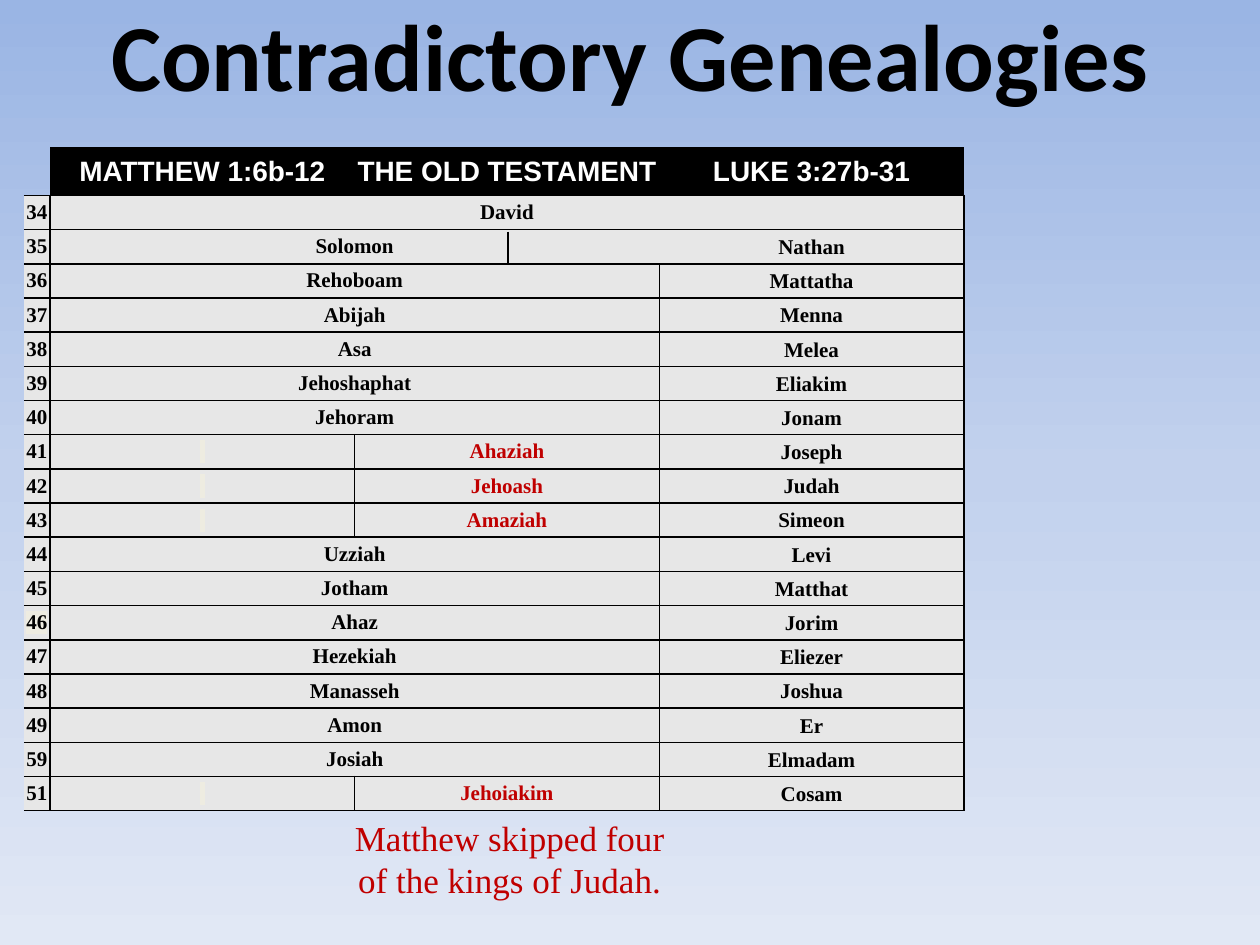
from copy import deepcopy

from lxml.etree import SubElement
from pptx import Presentation
from pptx.dml.color import RGBColor
from pptx.enum.shapes import MSO_CONNECTOR
from pptx.enum.text import MSO_ANCHOR, PP_ALIGN
from pptx.oxml.ns import qn
from pptx.util import Cm, Pt

BLACK = RGBColor(0x00, 0x00, 0x00)
WHITE = RGBColor(0xFF, 0xFF, 0xFF)
RED = RGBColor(0xC0, 0x00, 0x00)
GREY = RGBColor(0xE7, 0xE7, 0xE7)
CREAM = RGBColor(0xEE, 0xEC, 0xE1)
BACKGROUND_STOPS = [
    (0, RGBColor(0x9A, 0xB5, 0xE4)),
    (0.5, RGBColor(0xC2, 0xD1, 0xED)),
    (1, RGBColor(0xE1, 0xE8, 0xF5)),
]

TITLE_FORMAT = {"name": "Calibri", "size": Pt(54), "bold": True}
HEADER_FORMAT = {"name": "Arial", "size": Pt(16), "bold": True}
NAME_FORMAT = {"name": "Times New Roman", "size": Pt(12), "bold": True}
CAPTION_FORMAT = {"name": "Times New Roman", "size": Pt(20), "bold": False}

HEADERS = ["MATTHEW 1:6b-12", "THE OLD TESTAMENT", "LUKE 3:27b-31"]
# number, name in Matthew and the Old Testament, name in Luke
GENERATIONS = [
    ("34", "David", None),
    ("35", "Solomon", "Nathan"),
    ("36", "Rehoboam", "Mattatha"),
    ("37", "Abijah", "Menna"),
    ("38", "Asa", "Melea"),
    ("39", "Jehoshaphat", "Eliakim"),
    ("40", "Jehoram", "Jonam"),
    ("41", "Ahaziah", "Joseph"),
    ("42", "Jehoash", "Judah"),
    ("43", "Amaziah", "Simeon"),
    ("44", "Uzziah", "Levi"),
    ("45", "Jotham", "Matthat"),
    ("46", "Ahaz", "Jorim"),
    ("47", "Hezekiah", "Eliezer"),
    ("48", "Manasseh", "Joshua"),
    ("49", "Amon", "Er"),
    ("59", "Josiah", "Elmadam"),
    ("51", "Jehoiakim", "Cosam"),
]
SKIPPED_KINGS = {"Ahaziah", "Jehoash", "Amaziah", "Jehoiakim"}


def write(text_frame, text, formats, color, highlight=None):
    paragraph = text_frame.paragraphs[0]
    paragraph.alignment = PP_ALIGN.CENTER
    run = paragraph.add_run()
    run.text = text
    for name, value in formats.items():
        setattr(run.font, name, value)
    run.font.color.rgb = color
    if highlight is not None:
        properties = run.font._element
        element = SubElement(properties, qn("a:highlight"))
        SubElement(element, qn("a:srgbClr"), val=str(highlight))
        properties.find(qn("a:latin")).addprevious(element)


def set_borders(cell, sides):
    """Draw the sides named in a string of L, R, T and B; clear the others."""
    properties = cell._tc.get_or_add_tcPr()
    for index, side in enumerate("LRTB"):
        line = SubElement(properties, qn(f"a:ln{side}"), w=str(Pt(1)))
        if side in sides:
            fill = SubElement(line, qn("a:solidFill"))
            SubElement(fill, qn("a:srgbClr"), val=str(BLACK))
        else:
            SubElement(line, qn("a:noFill"))
        properties.insert(index, line)


presentation = Presentation()
presentation.slide_width = Cm(25.4)
presentation.slide_height = Cm(19.05)
slide = presentation.slides.add_slide(presentation.slide_layouts[5])

# Background
background_fill = slide.background.fill
background_fill.gradient()
background_fill.gradient_angle = 270
stop_list = slide.element.find(".//" + qn("a:gsLst"))
stop_list.insert(1, deepcopy(stop_list[0]))
for stop, (position, color) in zip(background_fill.gradient_stops, BACKGROUND_STOPS):
    stop.position = position
    stop.color.rgb = color

# Title
title = slide.shapes.title
title.left, title.top, title.width, title.height = Cm(0), Cm(0), Cm(25.4), Cm(2.16)
title.text_frame.vertical_anchor = MSO_ANCHOR.MIDDLE
write(title.text_frame, "Contradictory Genealogies", TITLE_FORMAT, BLACK)

# Genealogy table
widths = [Cm(0.53)] + [Cm(6.14)] * 3
heights = [Cm(0.97)] + [Cm(0.69)] * len(GENERATIONS)
table = slide.shapes.add_table(
    len(heights), len(widths), Cm(0.48), Cm(2.97), sum(widths), sum(heights)
).table
for column, width in zip(table.columns, widths):
    column.width = width
for row, height in zip(table.rows, heights):
    row.height = height

for row_index in range(len(heights)):
    for column_index in range(len(widths)):
        cell = table.cell(row_index, column_index)
        cell.margin_left = cell.margin_right = cell.margin_top = cell.margin_bottom = 0
        cell.vertical_anchor = MSO_ANCHOR.MIDDLE
        if row_index == 0:
            sides = "B"
        elif column_index == 0:
            sides = "RTB"
        elif row_index == 2:
            sides = {1: "LTB", 2: "TB", 3: "RTB"}[column_index]
        else:
            sides = "LRTB"
        if row_index > 0:
            cell.fill.solid()
            cell.fill.fore_color.rgb = GREY
        elif column_index > 0:
            cell.fill.solid()
            cell.fill.fore_color.rgb = BLACK
        else:
            cell.fill.background()
        set_borders(cell, sides)

for column_index, header in enumerate(HEADERS, start=1):
    write(table.cell(0, column_index).text_frame, header, HEADER_FORMAT, WHITE)

for row_index, (number, king, luke_name) in enumerate(GENERATIONS, start=1):
    number_cell, matthew_cell, testament_cell, luke_cell = table.rows[row_index].cells
    write(number_cell.text_frame, number, NAME_FORMAT, BLACK,
          CREAM if number == "46" else None)
    if king in SKIPPED_KINGS:
        write(matthew_cell.text_frame, " ", NAME_FORMAT, BLACK, CREAM)
        write(testament_cell.text_frame, king, NAME_FORMAT, RED)
    else:
        matthew_cell.merge(testament_cell if luke_name else luke_cell)
        write(matthew_cell.text_frame, king, NAME_FORMAT, BLACK)
    if luke_name:
        luke_cell.margin_left = luke_cell.margin_right = luke_cell.margin_top = Cm(0.03)
        write(luke_cell.text_frame, luke_name, NAME_FORMAT, BLACK)

# Caption
caption = slide.shapes.add_textbox(Cm(6.78), Cm(16.33), Cm(6.99), Cm(1.96))
caption.text_frame.word_wrap = True
write(caption.text_frame, "Matthew skipped four of the kings of Judah.", CAPTION_FORMAT, RED)

# Divider between Solomon and Nathan
divider = slide.shapes.add_connector(
    MSO_CONNECTOR.STRAIGHT, Cm(10.24), Cm(4.67), Cm(10.24), Cm(5.33)
)
divider.line.color.rgb = BLACK
divider.line.width = Pt(1.25)
SubElement(divider._element.spPr, qn("a:effectLst"))

presentation.save("out.pptx")
